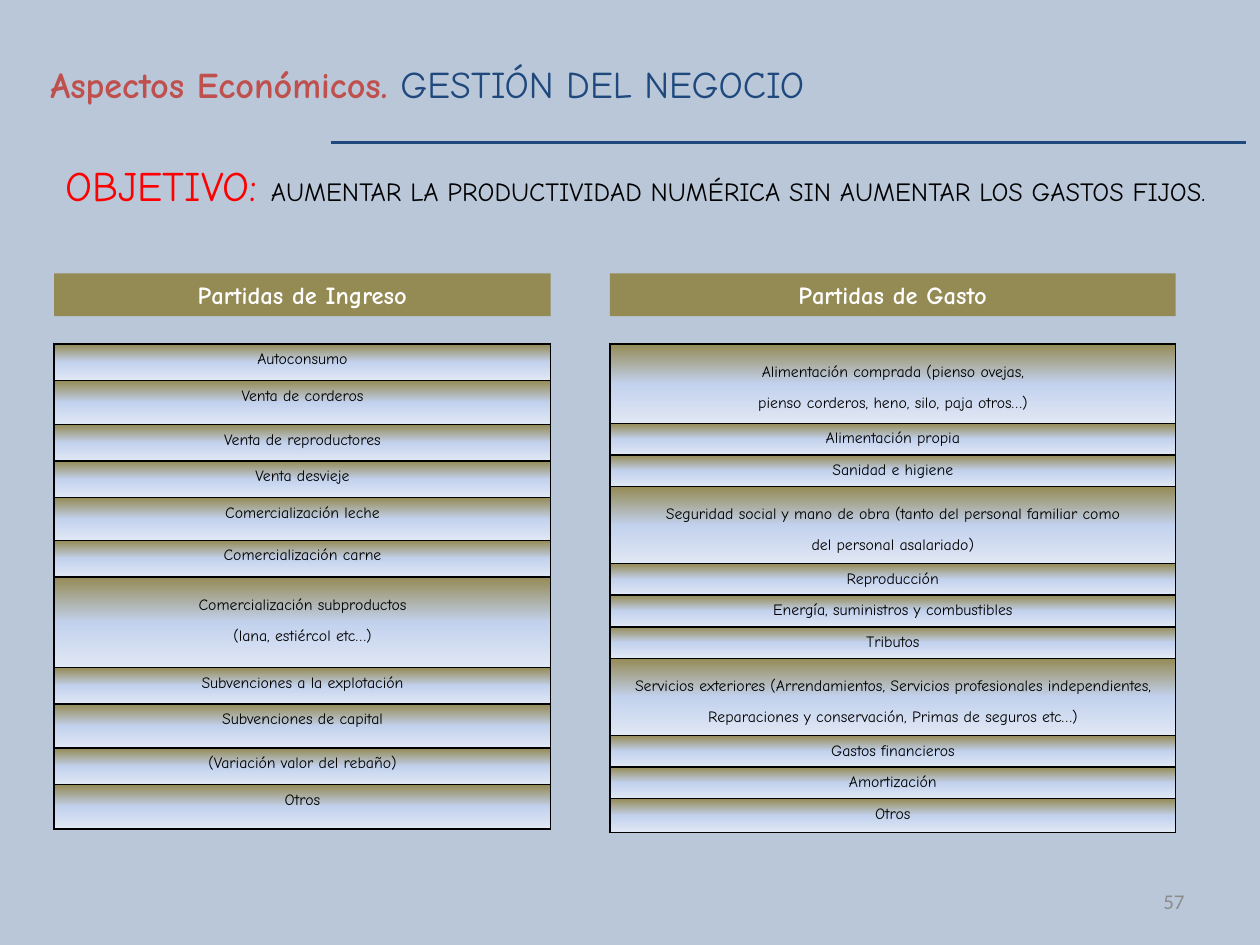
from lxml import etree
from pptx import Presentation
from pptx.dml.color import RGBColor
from pptx.enum.shapes import MSO_CONNECTOR, MSO_SHAPE
from pptx.enum.text import MSO_ANCHOR, PP_ALIGN
from pptx.oxml.ns import qn
from pptx.util import Inches, Pt

LEFT, CENTER, RIGHT = PP_ALIGN.LEFT, PP_ALIGN.CENTER, PP_ALIGN.RIGHT
MIDDLE = MSO_ANCHOR.MIDDLE
FONT, NUMBER_FONT = "Comic Neue", "Calibri"
COLORS = {
    "background": "B9C7D9", "olive": "948A54", "sky": "C2D1ED", "pale": "E1E8F5",
    "topic": "C0504D", "navy": "1F497D", "red": "FF0000", "black": "000000",
    "white": "FFFFFF", "gray": "8C8C8C",
}
GRADIENT = [(0, "olive"), (50, "sky"), (100, "pale")]

# Spans: text, size, color, bold
TITLE = [("Aspectos Económicos. ", 20.7, "topic", True),
         ("GESTIÓN DEL NEGOCIO", 21.6, "navy", False)]
OBJECTIVE = [("OBJETIVO: ", 24, "red", False),
             ("AUMENTAR LA PRODUCTIVIDAD NUMÉRICA SIN AUMENTAR LOS GASTOS FIJOS.",
              15, "black", False)]
PAGE_NUMBER = [("57", 12, "gray", False)]

# Rows: height, lines of text
INCOME = [
    (0.29, ["Autoconsumo"]),
    (0.35, ["Venta de corderos"]),
    (0.29, ["Venta de reproductores"]),
    (0.29, ["Venta desvieje"]),
    (0.34, ["Comercialización leche"]),
    (0.29, ["Comercialización carne"]),
    (0.72, ["Comercialización subproductos", "(lana, estiércol etc…)"]),
    (0.29, ["Subvenciones a la explotación"]),
    (0.35, ["Subvenciones de capital"]),
    (0.29, ["(Variación valor del rebaño)"]),
    (0.35, ["Otros"]),
]
EXPENSES = [
    (0.63, ["Alimentación comprada (pienso ovejas,",
            "pienso corderos, heno, silo, paja otros…)"]),
    (0.24, ["Alimentación propia"]),
    (0.24, ["Sanidad e higiene"]),
    (0.59, ["Seguridad social y mano de obra (tanto del personal familiar como",
            "del personal asalariado)"]),
    (0.24, ["Reproducción"]),
    (0.24, ["Energía, suministros y combustibles"]),
    (0.24, ["Tributos"]),
    (0.59, ["Servicios exteriores (Arrendamientos, Servicios profesionales independientes,",
            "Reparaciones y conservación, Primas de seguros etc…)"]),
    (0.24, ["Gastos financieros"]),
    (0.24, ["Amortización"]),
    (0.27, ["Otros"]),
]
# Columns: heading, left, width, rows
COLUMNS = [("Partidas de Ingreso", 0.43, 3.94, INCOME),
           ("Partidas de Gasto", 4.84, 4.49, EXPENSES)]
HEADING_TOP, HEADING_HEIGHT, TABLE_TOP = 2.17, 0.34, 2.73


def rgb(name):
    return RGBColor.from_string(COLORS[name])


def write(para, spans, align, font=FONT):
    para.alignment = align
    for text, size, color, bold in spans:
        span = para.add_run()
        span.text = text
        span.font.name = font
        span.font.size = Pt(size)
        span.font.bold = bold
        span.font.color.rgb = rgb(color)


def add_text(page, area, spans, align, font=FONT):
    box = page.shapes.add_textbox(*map(Inches, area))
    box.text_frame.word_wrap = True
    write(box.text_frame.paragraphs[0], spans, align, font)
    return box


def add_color(parent, name):
    etree.SubElement(parent, qn("a:srgbClr"), val=COLORS[name])


def style_cell(cell):
    """Give the cell thin black borders and a vertical gradient."""
    properties = cell._tc.get_or_add_tcPr()
    for side in ("lnL", "lnR", "lnT", "lnB"):
        border = etree.SubElement(properties, qn(f"a:{side}"), w=str(Pt(1)))
        add_color(etree.SubElement(border, qn("a:solidFill")), "black")
    gradient = etree.SubElement(properties, qn("a:gradFill"), rotWithShape="1")
    stops = etree.SubElement(gradient, qn("a:gsLst"))
    for percent, color in GRADIENT:
        add_color(etree.SubElement(stops, qn("a:gs"), pos=str(percent * 1000)), color)
    etree.SubElement(gradient, qn("a:lin"), ang=str(90 * 60000), scaled="0")


def add_heading(page, text, left, width):
    area = (left, HEADING_TOP, width, HEADING_HEIGHT)
    bar = page.shapes.add_shape(MSO_SHAPE.RECTANGLE, *map(Inches, area))
    bar.shadow.inherit = False
    bar.fill.solid()
    bar.fill.fore_color.rgb = rgb("olive")
    bar.line.fill.background()
    bar.text_frame.vertical_anchor = MIDDLE
    write(bar.text_frame.paragraphs[0], [(text, 14, "white", True)], CENTER)


def add_item_table(page, left, width, rows):
    height = sum(row_height for row_height, _ in rows)
    area = (left, TABLE_TOP, width, height)
    table = page.shapes.add_table(len(rows), 1, *map(Inches, area)).table
    table.first_row = table.horz_banding = False
    for index, (row_height, lines) in enumerate(rows):
        table.rows[index].height = Inches(row_height)
        cell = table.cell(index, 0)
        style_cell(cell)
        frame = cell.text_frame
        for number, line in enumerate(lines):
            para = frame.add_paragraph() if number else frame.paragraphs[0]
            if len(lines) > 1:
                para.line_spacing = 1.7
            write(para, [(line, 9, "black", False)], CENTER)


def add_title(page):
    title = page.shapes.title
    title.left, title.top, title.width, title.height = map(Inches, (0.3, 0.04, 9.7, 1.25))
    title.text_frame.vertical_anchor = MIDDLE
    write(title.text_frame.paragraphs[0], TITLE, LEFT)
    ends = (2.63, 1.13, 9.89, 1.13)
    rule = page.shapes.add_connector(MSO_CONNECTOR.STRAIGHT, *map(Inches, ends))
    rule.line.color.rgb = rgb("navy")
    rule.line.width = Pt(1.5)
    etree.SubElement(rule._element.spPr, qn("a:effectLst"))


def main():
    deck = Presentation()
    deck.slide_width, deck.slide_height = Inches(10), Inches(7.5)
    page = deck.slides.add_slide(deck.slide_layouts[5])
    page.background.fill.solid()
    page.background.fill.fore_color.rgb = rgb("background")

    add_title(page)
    add_text(page, (0.2, 1.22, 9.69, 0.5), OBJECTIVE, CENTER)
    for heading, left, width, rows in COLUMNS:
        add_heading(page, heading, left, width)
        add_item_table(page, left, width, rows)
    number = add_text(page, (7.17, 6.95, 2.33, 0.4), PAGE_NUMBER, RIGHT, NUMBER_FONT)
    number.text_frame.vertical_anchor = MIDDLE
    deck.save("out.pptx")


if __name__ == "__main__":
    main()
